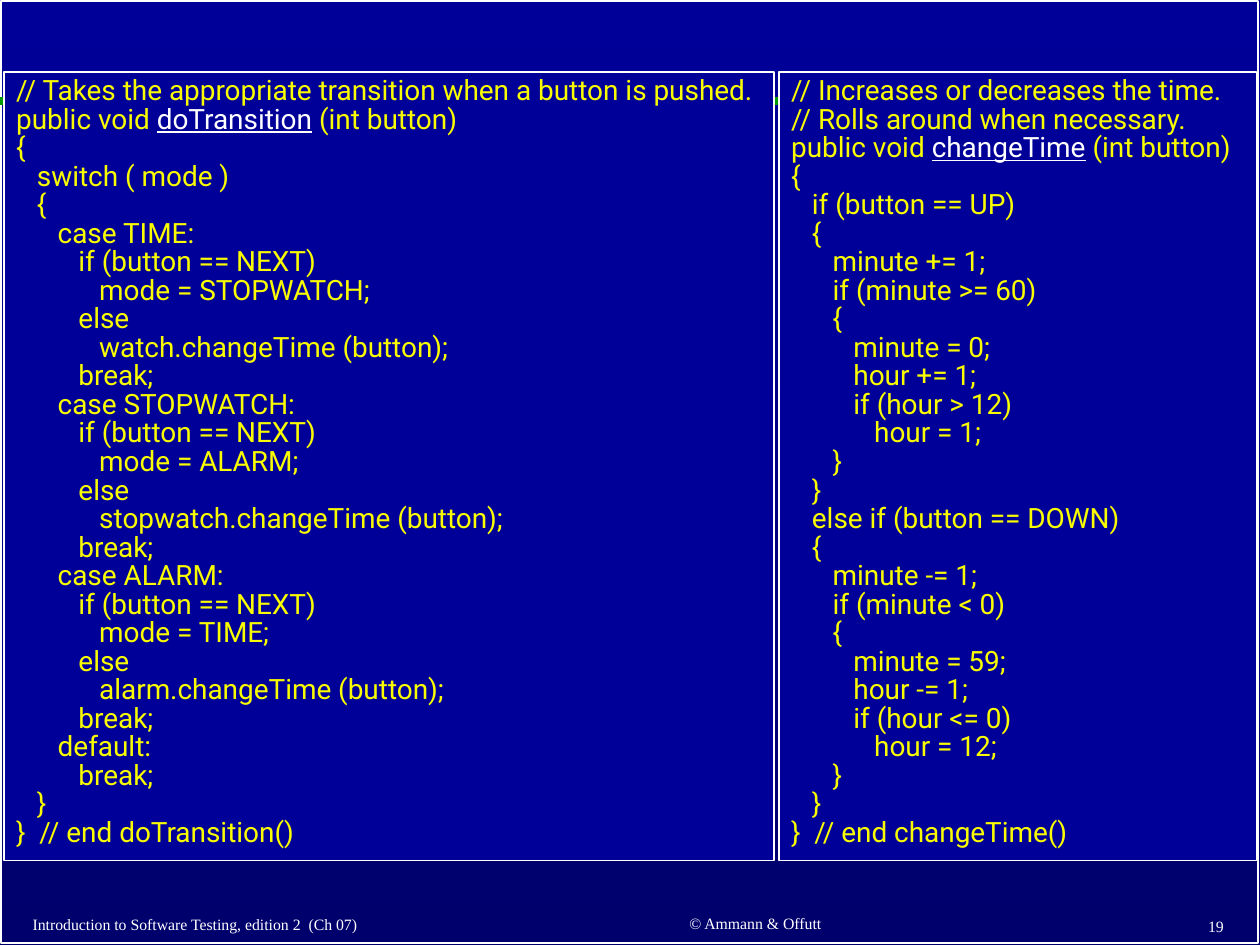
from dataclasses import dataclass

from lxml import etree
from pptx import Presentation
from pptx.dml.color import RGBColor
from pptx.enum.shapes import MSO_CONNECTOR, MSO_SHAPE
from pptx.enum.text import MSO_ANCHOR, MSO_AUTO_SIZE, PP_ALIGN
from pptx.oxml.ns import qn
from pptx.util import Pt

RECTANGLE = MSO_SHAPE.RECTANGLE
STRAIGHT = MSO_CONNECTOR.STRAIGHT
LEFT, CENTER, RIGHT = PP_ALIGN.LEFT, PP_ALIGN.CENTER, PP_ALIGN.RIGHT
TOP, MIDDLE = MSO_ANCHOR.TOP, MSO_ANCHOR.MIDDLE
GROW = MSO_AUTO_SIZE.SHAPE_TO_FIT_TEXT

SIGNATURE_START = "public void "

DO_TRANSITION = """\
// Takes the appropriate transition when a button is pushed.
public void doTransition (int button)
{
   switch ( mode )
   {
      case TIME:
         if (button == NEXT)
            mode = STOPWATCH;
         else
            watch.changeTime (button);
         break;
      case STOPWATCH:
         if (button == NEXT)
            mode = ALARM;
         else
            stopwatch.changeTime (button);
         break;
      case ALARM:
         if (button == NEXT)
            mode = TIME;
         else
            alarm.changeTime (button);
         break;
      default:
         break;
   }
}  // end doTransition()"""

CHANGE_TIME = """\
// Increases or decreases the time.
// Rolls around when necessary.
public void changeTime (int button)
{
   if (button == UP)
   {
      minute += 1;
      if (minute >= 60)
      {
         minute = 0;
         hour += 1;
         if (hour > 12)
            hour = 1;
      }
   }
   else if (button == DOWN)
   {
      minute -= 1;
      if (minute < 0)
      {
         minute = 59;
         hour -= 1;
         if (hour <= 0)
            hour = 12;
      }
   }
}  // end changeTime()"""


@dataclass(frozen=True)
class Theme:
    blue: RGBColor = RGBColor(0x00, 0x00, 0x99)
    dark_blue: RGBColor = RGBColor(0x00, 0x00, 0x6D)
    white: RGBColor = RGBColor(0xFF, 0xFF, 0xFF)
    green: RGBColor = RGBColor(0x00, 0x99, 0x00)
    yellow: RGBColor = RGBColor(0xFA, 0xFD, 0x00)
    code_font: str = "Roboto"
    footer_font: str = "Times New Roman"
    code_size: int = 16
    footer_size: int = 9
    code_spacing: float = 0.85


class SlideBuilder:
    def __init__(self, slide, theme):
        self.slide = slide
        self.theme = theme

    def background(self):
        fill = self.slide.background.fill
        fill.gradient()
        fill.gradient_angle = 270
        for stop, color in zip(fill.gradient_stops, (self.theme.blue, self.theme.dark_blue)):
            stop.color.rgb = color

    def box(self, left, top, width, height, fill=None):
        shape = self.slide.shapes.add_shape(
            RECTANGLE, Pt(left), Pt(top), Pt(width), Pt(height))
        shape.shadow.inherit = False
        if fill is None:
            shape.fill.background()
        else:
            shape.fill.solid()
            shape.fill.fore_color.rgb = fill
        shape.line.color.rgb = self.theme.white
        shape.line.width = Pt(1)
        return shape

    def rule(self, left, right, top):
        connector = self.slide.shapes.add_connector(
            STRAIGHT, Pt(left), Pt(top), Pt(right), Pt(top))
        connector.line.color.rgb = self.theme.green
        connector.line.width = Pt(4.5)
        etree.SubElement(connector._element.spPr, qn("a:effectLst"))

    def format_run(self, run, font, size, color):
        run.font.name = font
        run.font.size = Pt(size)
        run.font.color.rgb = color

    def code_panel(self, left, top, width, height, code):
        theme = self.theme
        text_frame = self.box(left, top, width, height, theme.blue).text_frame
        text_frame.word_wrap = True
        text_frame.auto_size = GROW
        text_frame.vertical_anchor = TOP
        text_frame.text = code
        for paragraph in text_frame.paragraphs:
            paragraph.alignment = LEFT
            paragraph.line_spacing = theme.code_spacing
            if paragraph.text.startswith(SIGNATURE_START):
                self.split_signature(paragraph)
            for run in paragraph.runs:
                color = theme.white if run.font.underline else theme.yellow
                self.format_run(run, theme.code_font, theme.code_size, color)

    def split_signature(self, paragraph):
        """Give the method name its own underlined run."""
        name, space, arguments = paragraph.text[len(SIGNATURE_START):].partition(" ")
        paragraph.runs[0].text = SIGNATURE_START
        name_run = paragraph.add_run()
        name_run.text = name
        name_run.font.underline = True
        paragraph.add_run().text = space + arguments

    def footer(self, left, top, width, height, text, alignment):
        theme = self.theme
        text_box = self.slide.shapes.add_textbox(
            Pt(left), Pt(top), Pt(width), Pt(height))
        text_frame = text_box.text_frame
        text_frame.word_wrap = False
        text_frame.vertical_anchor = MIDDLE
        text_frame.text = text
        paragraph = text_frame.paragraphs[0]
        paragraph.alignment = alignment
        self.format_run(paragraph.runs[0], theme.footer_font, theme.footer_size, theme.white)


def main():
    presentation = Presentation()
    presentation.slide_width = Pt(720)
    presentation.slide_height = Pt(540)
    slide = presentation.slides.add_slide(presentation.slide_layouts[6])
    builder = SlideBuilder(slide, Theme())

    # Backdrop: gradient, frame and title rule
    builder.background()
    builder.box(0.75, 0.75, 718, 538)
    builder.rule(0, 718, 57.6)

    # Two methods side by side
    panel_top, panel_height = 41, 450.7
    builder.code_panel(2.2, panel_top, 440, panel_height, DO_TRANSITION)
    builder.code_panel(445, panel_top, 273, panel_height, CHANGE_TIME)

    # Footer
    builder.footer(11.5, 520, 294.5, 16.6,
                   "Introduction to Software Testing, edition 2  (Ch 07)", LEFT)
    builder.footer(317.5, 519.1, 228.2, 16.6, "© Ammann & Offutt", CENTER)
    builder.footer(556.6, 520.6, 149.8, 17.3, "19", RIGHT)

    presentation.save("out.pptx")


if __name__ == "__main__":
    main()
